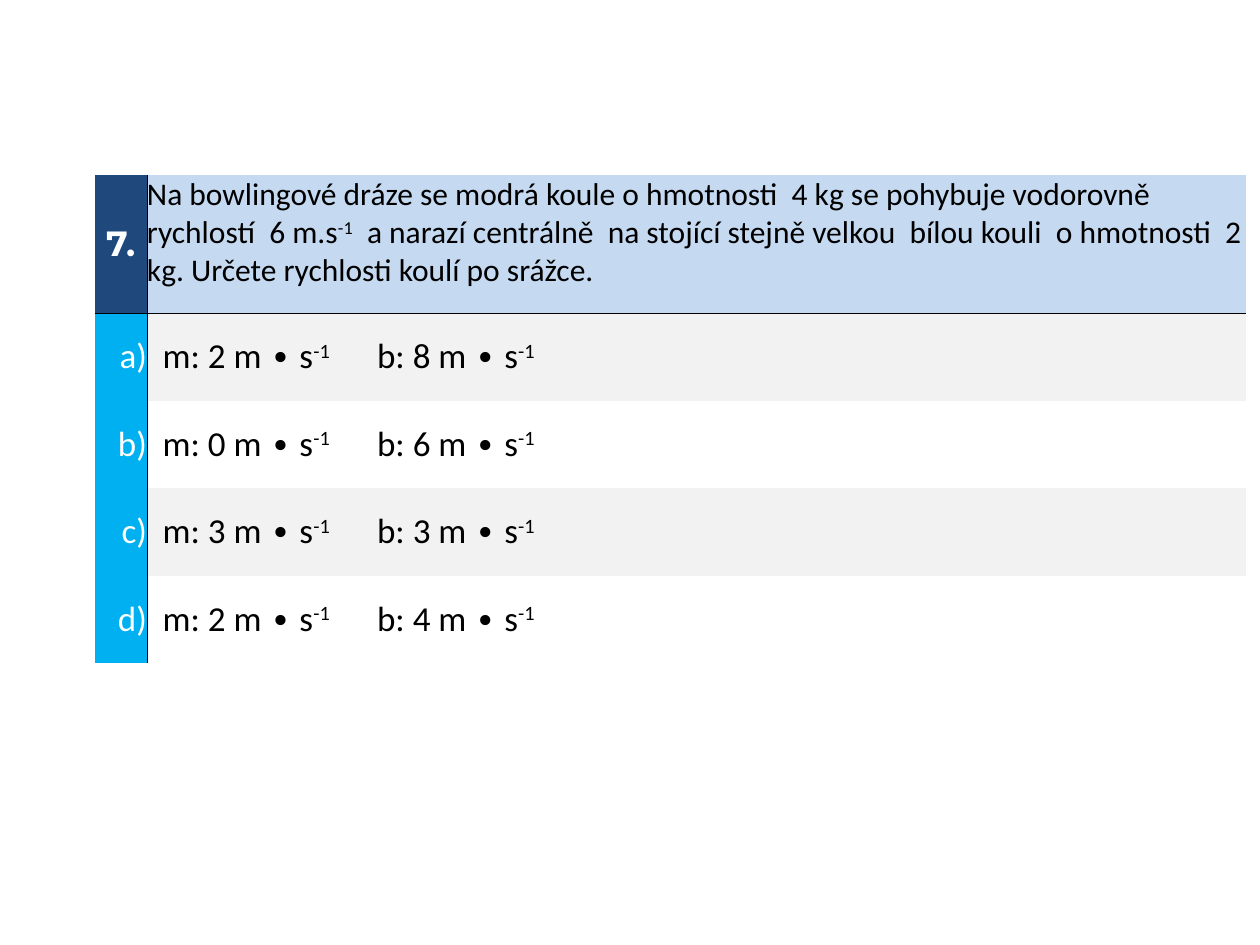
import dataclasses

import lxml.etree
import pptx
import pptx.dml.color
import pptx.enum.text
import pptx.oxml.ns
import pptx.util

Pt = pptx.util.Pt
Color = pptx.dml.color.RGBColor.from_string
Align = pptx.enum.text.PP_ALIGN
Anchor = pptx.enum.text.MSO_ANCHOR
qn = pptx.oxml.ns.qn


@dataclasses.dataclass(frozen=True)
class Theme:
    navy: str = "1F497D"
    pale_blue: str = "C5D9F1"
    cyan: str = "00B0F0"
    gray: str = "F2F2F2"
    black: str = "000000"
    white: str = "FFFFFF"
    body_font: str = "Calibri"
    number_font: str = "Montserrat"
    question_size: int = 18
    answer_size: int = 20
    rule_width: float = 0.5


THEME = Theme()
QUESTION = [
    ("Na bowlingové dráze se modrá koule o hmotnosti  4 kg se pohybuje "
     "vodorovně rychlostí  6 m.s", False),
    ("-1", True),
    ("  a narazí centrálně  na stojící stejně velkou  bílou kouli  "
     "o hmotnosti  2 kg. Určete rychlosti koulí po srážce.", False),
]
ANSWERS = [("a)", 2, 8), ("b)", 0, 6), ("c)", 3, 3), ("d)", 2, 4)]


def set_borders(cell, ruled_sides):
    properties = cell._tc.get_or_add_tcPr()
    for side in "LRTB":
        line = lxml.etree.SubElement(properties, qn(f"a:ln{side}"))
        if side in ruled_sides:
            line.set("w", str(Pt(THEME.rule_width)))
            fill = lxml.etree.SubElement(line, qn("a:solidFill"))
            lxml.etree.SubElement(fill, qn("a:srgbClr"), val=THEME.black)
        else:
            line.set("w", "0")
            lxml.etree.SubElement(line, qn("a:noFill"))


def style_cell(cell, fill, ruled_sides, anchor=Anchor.MIDDLE, left=0):
    set_borders(cell, ruled_sides)
    if fill:
        cell.fill.solid()
        cell.fill.fore_color.rgb = Color(fill)
    else:
        cell.fill.background()
    cell.margin_left = Pt(left)
    cell.margin_right = cell.margin_top = cell.margin_bottom = Pt(0)
    cell.vertical_anchor = anchor


def write(cell, spans, size, color, align=Align.LEFT, font=THEME.body_font, bold=False, tab=None):
    para = cell.text_frame.paragraphs[0]
    para.alignment = align
    if tab:
        tabs = lxml.etree.SubElement(para._p.get_or_add_pPr(), qn("a:tabLst"))
        lxml.etree.SubElement(tabs, qn("a:tab"), pos=str(Pt(tab)), algn="l")
    for text, raised in spans:
        span = para.add_run()
        span.text = text
        span.font.name = font
        span.font.size = Pt(size)
        span.font.bold = bold
        span.font.color.rgb = Color(color)
        if raised:
            span.font._element.set("baseline", "30000")


def fill_question(number_cell, text_cell):
    style_cell(number_cell, THEME.navy, "RB")
    write(number_cell, [("7.", False)], THEME.answer_size, THEME.white,
          Align.CENTER, THEME.number_font, True)
    style_cell(text_cell, THEME.pale_blue, "LB", Anchor.TOP)
    write(text_cell, QUESTION, THEME.question_size, THEME.black)


def fill_answer(letter_cell, text_cell, index, answer):
    letter, blue_speed, white_speed = answer
    top = "T" if index == 0 else ""
    style_cell(letter_cell, THEME.cyan, "R" + top)
    write(letter_cell, [(letter, False)], THEME.answer_size, THEME.white, Align.RIGHT)
    style_cell(text_cell, THEME.gray if index % 2 == 0 else None, "L" + top, left=9)
    spans = [
        (f"m: {blue_speed} m ∙ s", False), ("-1", True),
        (f"\tb: {white_speed} m ∙ s", False), ("-1", True),
    ]
    write(text_cell, spans, THEME.answer_size, THEME.black, tab=122.5)


def add_quiz(page, left, top, width, height):
    number_width, question_height = 30, 79
    answer_height = (height - question_height) / len(ANSWERS)
    table = page.shapes.add_table(
        len(ANSWERS) + 1, 2, Pt(left), Pt(top), Pt(width), Pt(height)).table
    table.first_row = table.horz_banding = False
    table.columns[0].width = Pt(number_width)
    table.columns[1].width = Pt(width - number_width)
    table.rows[0].height = Pt(question_height)
    fill_question(table.cell(0, 0), table.cell(0, 1))
    for index, answer in enumerate(ANSWERS):
        row = index + 1
        table.rows[row].height = Pt(answer_height)
        fill_answer(table.cell(row, 0), table.cell(row, 1), index, answer)


def main():
    deck = pptx.Presentation()
    deck.slide_width, deck.slide_height = Pt(720), Pt(540)
    page = deck.slides.add_slide(deck.slide_layouts[6])
    add_quiz(page, 54, 100, 658, 279)
    deck.save("out.pptx")


if __name__ == "__main__":
    main()
